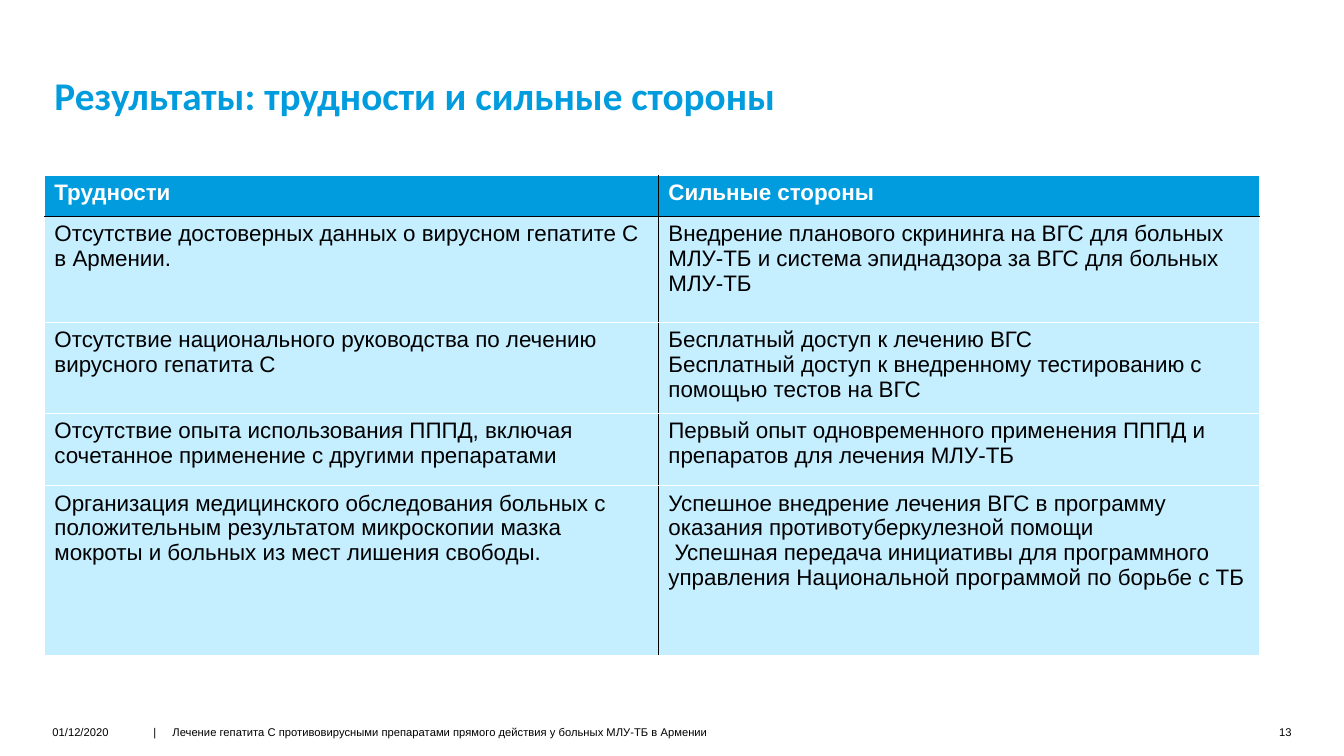
from lxml import etree
from pptx import Presentation
from pptx.dml.color import RGBColor
from pptx.enum import text as t
from pptx.oxml import ns
from pptx.util import Inches, Pt

COLORS = {"blue": "009CDE", "pale": "C5EEFF", "white": "FFFFFF", "black": "000000"}


def write(para, text, size=16, color="black", font="Arial", bold=False,
          align=t.PP_ALIGN.LEFT, tab=None, indent=None):
    """Fill a paragraph with one formatted run; tab and indent are in inches."""
    props = para._p.get_or_add_pPr()
    if tab:
        tabs = etree.SubElement(props, ns.qn("a:tabLst"))
        etree.SubElement(tabs, ns.qn("a:tab"), pos=str(Inches(tab)), algn="l")
    if indent:
        props.set("indent", str(Inches(indent)))
    para.alignment = align
    span = para.add_run()
    span.text = text
    span.font.size = Pt(size)
    span.font.name = font
    span.font.bold = bold
    span.font.color.rgb = RGBColor.from_string(COLORS[color])


def add_text(place, text, right_inset=0, anchor=t.MSO_ANCHOR.TOP, **style):
    box = page.shapes.add_textbox(*[Inches(n) for n in place])
    frame = box.text_frame
    frame.word_wrap = True
    frame.margin_left = frame.margin_top = frame.margin_bottom = 0
    frame.margin_right = Inches(right_inset)
    frame.vertical_anchor = anchor
    write(frame.paragraphs[0], text, **style)
    return frame


deck = Presentation()
deck.slide_width, deck.slide_height = Inches(13.33), Inches(7.5)
page = deck.slides.add_slide(deck.slide_layouts[6])

# Title
title = add_text((0.52, 0.39, 8.92, 0.79), "Результаты: трудности и сильные стороны",
                 right_inset=0.39, anchor=t.MSO_ANCHOR.BOTTOM,
                 size=28, color="blue", font="Calibri", bold=True)
title.margin_left = Inches(0.02)
title.paragraphs[0].line_spacing = 0.9

# Table: each cell is a list of paragraphs
rows = [
    (["Трудности"], ["Сильные стороны"]),
    (["Отсутствие достоверных данных о вирусном гепатите С в Армении."],
     ["Внедрение планового скрининга на ВГС для больных МЛУ-ТБ и система "
      "эпиднадзора за ВГС для больных МЛУ-ТБ"]),
    (["Отсутствие национального руководства по лечению вирусного гепатита С"],
     ["Бесплатный доступ к лечению ВГС",
      "Бесплатный доступ к внедренному тестированию с помощью тестов на ВГС"]),
    (["Отсутствие опыта использования ПППД, включая сочетанное применение "
      "с другими препаратами"],
     ["Первый опыт одновременного применения ПППД и препаратов для лечения МЛУ-ТБ"]),
    (["Организация медицинского обследования больных с положительным результатом "
      "микроскопии мазка мокроты и больных из мест лишения свободы."],
     ["Успешное внедрение лечения ВГС в программу оказания противотуберкулезной помощи",
      "Успешная передача инициативы для программного управления Национальной "
      "программой по борьбе с ТБ"]),
]
widths = [6.09, 5.96]
heights = [0.41, 1.05, 0.72, 0.72, 1.68]
table = page.shapes.add_table(len(rows), len(widths), Inches(0.44), Inches(1.74),
                              Inches(sum(widths)), Inches(sum(heights))).table
table.first_row = True
table.horz_banding = False
for column, width in zip(table.columns, widths):
    column.width = Inches(width)
for table_row, height in zip(table.rows, heights):
    table_row.height = Inches(height)

for r, row in enumerate(rows):
    header = r == 0
    for c, lines in enumerate(row):
        cell = table.cell(r, c)
        cell.fill.solid()
        cell.fill.fore_color.rgb = RGBColor.from_string(COLORS["blue" if header else "pale"])
        # Black lines run between the columns and under the header only
        black_sides = {"R" if c == 0 else "L"}
        if r < 2:
            black_sides.add("B" if header else "T")
        props = cell._tc.get_or_add_tcPr()
        for i, side in enumerate("LRTB"):
            border = etree.Element(ns.qn("a:ln" + side), w=str(Pt(1)))
            fill = etree.SubElement(border, ns.qn("a:solidFill"))
            color = "black" if side in black_sides else "white"
            etree.SubElement(fill, ns.qn("a:srgbClr"), val=COLORS[color])
            props.insert(i, border)
        for i, line in enumerate(lines):
            frame = cell.text_frame
            para = frame.add_paragraph() if i else frame.paragraphs[0]
            write(para, line, color="white" if header else "black", bold=header,
                  indent=0.06 if line.startswith("Успешная") else None)

# Footer
add_text((0.52, 7.2, 0.86, 0.2), "01/12/2020", size=8)
add_text((1.52, 7.2, 6.71, 0.3),
         "|\tЛечение гепатита С противовирусными препаратами прямого действия "
         "у больных МЛУ-ТБ в Армении", size=8, tab=0.19)
add_text((12.49, 7.2, 0.32, 0.2), "13", size=8, align=t.PP_ALIGN.RIGHT)

deck.save("out.pptx")
